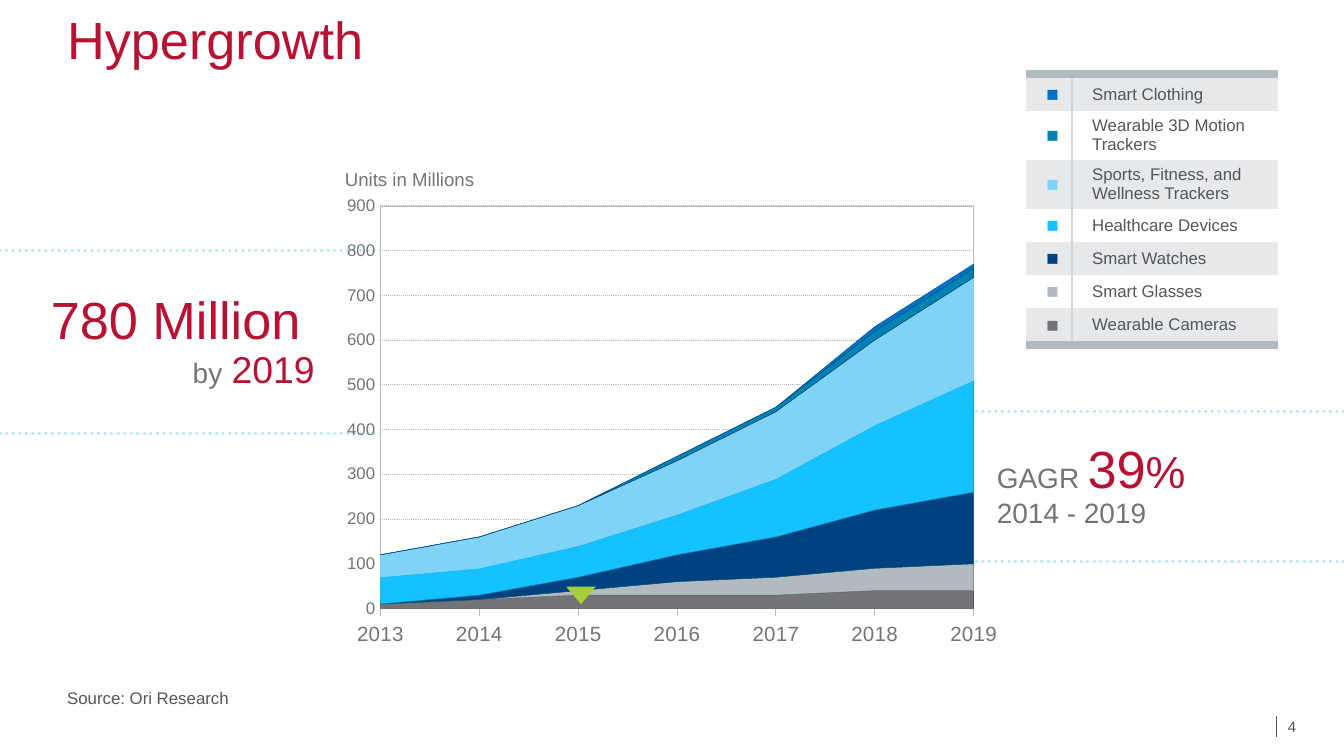
import pptx
import pptx.chart.data
import pptx.dml.color
import pptx.enum.chart
import pptx.enum.dml
import pptx.enum.shapes
import pptx.enum.text
import pptx.oxml
import pptx.oxml.ns
import pptx.util
from lxml import etree

Cm, Pt = pptx.util.Cm, pptx.util.Pt
qn = pptx.oxml.ns.qn
ANCHOR = pptx.enum.text.MSO_ANCHOR
ALIGN = pptx.enum.text.PP_ALIGN
DOTTED = pptx.enum.dml.MSO_LINE.ROUND_DOT
FONT = "Arial"
RED, DARK, GRAY, SILVER = "B71234", "53565A", "727478", "B1BABF"
BAND, WHITE, DIVIDER, DOTS = "E6E8EA", "FFFFFF", "D0D6D9", "A9E2F8"
NO_GRID_STYLE = "{2D5ABB26-0587-4C30-8999-92F81FD0307C}"

YEARS = ["2013", "2014", "2015", "2016", "2017", "2018", "2019"]
# Bottom to top: name, fill, outline, millions of units per year
DEVICES = [
    ("Wearable Cameras", "727478", "3E4043", [10, 20, 30, 30, 30, 40, 40]),
    ("Smart Glasses", "B1BABF", "727478", [0, 0, 10, 30, 40, 50, 60]),
    ("Smart Watches", "004280", "005778", [0, 10, 30, 60, 90, 130, 160]),
    ("Healthcare Devices", "15C2FF", "0083B3", [60, 60, 70, 90, 130, 190, 250]),
    ("Sports, Fitness, and Wellness Trackers", "7ED3F7", "7ED3F7",
     [50, 70, 90, 120, 150, 190, 230]),
    ("Wearable 3D Motion Trackers", "0083B3", "003160", [0, 0, 0, 10, 10, 20, 20]),
    ("Smart Clothing", "0071C5", "005594", [0, 0, 0, 0, 0, 10, 10]),
]


def rgb(color):
    return pptx.dml.color.RGBColor.from_string(color)


def fill_solid(fill, color):
    fill.solid()
    fill.fore_color.rgb = rgb(color)


def style_line(line, color, width):
    line.color.rgb = rgb(color)
    line.width = Pt(width)


def style_font(font, size, color):
    font.name, font.size = FONT, Pt(size)
    font.color.rgb = rgb(color)


def add_runs(paragraph, runs):
    """Add (text, size, colour) runs; a trailing newline becomes a line break."""
    for text, size, color in runs:
        run = paragraph.add_run()
        run.text = text.rstrip("\n")
        style_font(run.font, size, color)
        if text.endswith("\n"):
            paragraph.add_line_break()


def add_text(slide, box, paragraphs, anchor=ANCHOR.MIDDLE, align=ALIGN.LEFT,
             margins=True, wrap=True, spacing=0.9):
    frame = slide.shapes.add_textbox(*map(Cm, box)).text_frame
    frame.word_wrap = wrap
    frame.vertical_anchor = anchor
    if not margins:
        frame.margin_left = frame.margin_right = 0
        frame.margin_top = frame.margin_bottom = 0
    for index, runs in enumerate(paragraphs):
        paragraph = frame.add_paragraph() if index else frame.paragraphs[0]
        paragraph.alignment = align
        paragraph.line_spacing = spacing
        add_runs(paragraph, runs)


def add_rule(slide, start, end, color, width, dotted=False):
    rule = slide.shapes.add_connector(
        pptx.enum.shapes.MSO_CONNECTOR.STRAIGHT, *map(Cm, start + end))
    style_line(rule.line, color, width)
    properties = rule._element.spPr
    if dotted:
        rule.line.dash_style = DOTTED
        properties.find(qn("a:ln")).set("cap", "rnd")
    etree.SubElement(properties, qn("a:effectLst"))


def chart_xml(tag, content):
    return pptx.oxml.parse_xml(
        f'<c:{tag} {pptx.oxml.ns.nsdecls("c", "a")}>{content}</c:{tag}>')


def frame_plot(chart):
    """Fix the plot area, give it a white fill and clear the chart background."""
    plot_area = chart._chartSpace.chart.plotArea
    for layout in plot_area.findall(qn("c:layout")):
        plot_area.remove(layout)
    sides = {"x": 0.07, "y": 0.04, "w": 0.88, "h": 0.86}
    modes = '<c:layoutTarget val="inner"/><c:xMode val="edge"/><c:yMode val="edge"/>'
    values = "".join(f'<c:{side} val="{value}"/>' for side, value in sides.items())
    plot_area.insert(0, chart_xml(
        "layout", f"<c:manualLayout>{modes}{values}</c:manualLayout>"))
    plot_area.append(chart_xml(
        "spPr", f'<a:solidFill><a:srgbClr val="{WHITE}"/></a:solidFill><a:ln w="6350">'
        f'<a:solidFill><a:srgbClr val="{SILVER}"/></a:solidFill></a:ln>'))
    chart._chartSpace.find(qn("c:txPr")).addprevious(
        chart_xml("spPr", "<a:noFill/><a:ln><a:noFill/></a:ln>"))


def add_units_chart(slide):
    data = pptx.chart.data.CategoryChartData(number_format="#,##0")
    data.categories = YEARS
    for name, _, _, millions in DEVICES:
        data.add_series(name, [value * 1_000_000 for value in millions])
    chart = slide.shapes.add_chart(
        pptx.enum.chart.XL_CHART_TYPE.AREA_STACKED,
        Cm(6.3), Cm(3.54), Cm(12.74), Cm(8.85), data).chart
    style_font(chart.font, 10, DARK)
    chart.has_legend = chart.has_title = False
    chart.plots[0].vary_by_categories = False
    for series, (_, color, outline, _) in zip(chart.plots[0].series, DEVICES):
        fill_solid(series.format.fill, color)
        style_line(series.format.line, outline, 0.25)

    marks = pptx.enum.chart.XL_TICK_MARK
    years, units = chart.category_axis, chart.value_axis
    for axis, size, mark in ((years, 11, marks.OUTSIDE), (units, 9, marks.NONE)):
        style_font(axis.tick_labels.font, size, GRAY)
        style_line(axis.format.line, SILVER, 0.5)
        axis.major_tick_mark, axis.minor_tick_mark = mark, marks.NONE
    years.has_major_gridlines = False
    units.minimum_scale, units.maximum_scale = 0, 900_000_000
    units.major_unit = 100_000_000
    units.tick_labels.number_format = "#,##0,,"
    units.tick_labels.number_format_is_linked = False
    units.has_major_gridlines = True
    style_line(units.major_gridlines.format.line, SILVER, 0.5)
    units.major_gridlines.format.line.dash_style = DOTTED
    units._element.find(qn("c:crossBetween")).set("val", "midCat")
    frame_plot(chart)


def add_border(cell, side):
    border = pptx.oxml.parse_xml(
        f'<a:{side} {pptx.oxml.ns.nsdecls("a")} w="12700"><a:solidFill>'
        f'<a:srgbClr val="{DIVIDER}"/></a:solidFill></a:{side}>')
    cell._tc.get_or_add_tcPr().insert(0, border)


def set_margins(cell, horizontal, vertical):
    cell.margin_left = cell.margin_right = Cm(horizontal)
    cell.margin_top = cell.margin_bottom = Cm(vertical)


def add_legend_table(slide):
    rows = len(DEVICES) + 2
    table = slide.shapes.add_table(
        rows, 2, Cm(19.39), Cm(1.32), Cm(4.76), Cm(5.22)).table
    table.first_row = table.horz_banding = False
    table._tbl.tblPr.find(qn("a:tableStyleId")).text = NO_GRID_STYLE
    table.columns[0].width, table.columns[1].width = Cm(0.87), Cm(3.89)

    for row in (0, rows - 1):
        table.rows[row].height = Cm(0.15)
        bar = table.cell(row, 0)
        bar.merge(table.cell(row, 1))
        for cell in table.rows[row].cells:
            fill_solid(cell.fill, SILVER)
            set_margins(cell, 0, 0)
            cell.text_frame.paragraphs[0].font.size = Pt(1)

    for row, (name, color, _, _) in enumerate(reversed(DEVICES), 1):
        table.rows[row].height = Cm(0.92 if len(name) > 20 else 0.61)
        key, label = table.cell(row, 0), table.cell(row, 1)
        for cell, side in ((key, "lnR"), (label, "lnL")):
            fill_solid(cell.fill, BAND if row % 2 else WHITE)
            set_margins(cell, 0.38, 0.08)
            cell.vertical_anchor = ANCHOR.MIDDLE
            add_border(cell, side)
        # The narrow key column needs room for its square
        key.margin_left, key.margin_right = Cm(0.2), Cm(0.07)
        key.text_frame.paragraphs[0].alignment = ALIGN.CENTER
        add_runs(key.text_frame.paragraphs[0], [("■", 11, color)])
        add_runs(label.text_frame.paragraphs[0], [(name, 9, DARK)])


def add_year_marker(slide):
    marker = slide.shapes.add_shape(
        pptx.enum.shapes.MSO_SHAPE.ISOSCELES_TRIANGLE,
        Cm(10.7), Cm(11.09), Cm(0.56), Cm(0.33))
    marker.rotation = 180
    marker.shadow.inherit = False
    fill_solid(marker.fill, "A6CE39")
    marker.line.fill.background()


def main():
    deck = pptx.Presentation()
    deck.slide_width, deck.slide_height = Cm(25.4), Cm(14.29)
    slide = deck.slides.add_slide(deck.slide_layouts[6])

    add_rule(slide, (24.13, 13.54), (24.13, 13.94), DARK, 0.5)
    for left, right, heights in ((0, 7.77, (4.73, 8.19)), (17.58, 25.4, (7.78, 10.62))):
        for y in heights:
            add_rule(slide, (left, y), (right, y), DOTS, 1.75, dotted=True)

    add_text(slide, (1.27, 0.27, 22.86, 2.16), [[("Hypergrowth", 28, RED)]],
             anchor=ANCHOR.TOP, margins=False)
    add_text(slide, (24.34, 13.55, 0.64, 0.43), [[("4", 8, DARK)]], margins=False)
    add_text(slide, (1.27, 12.95, 18.9, 0.43), [[("Source: Ori Research", 9, DARK)]],
             anchor=ANCHOR.BOTTOM, margins=False)
    add_units_chart(slide)
    add_text(slide, (0.69, 5.43, 5.51, 2.11),
             [[("780 Million \n", 28, RED), ("by", 15, GRAY), (" ", 18, DARK),
               ("2019", 20, RED)]], align=ALIGN.RIGHT)
    add_text(slide, (18.59, 8.24, 4.78, 1.91),
             [[("GAGR", 15, GRAY), (" ", 16, GRAY), ("39", 28, RED), ("%", 24, RED)],
              [("2014 - 2019", 15, GRAY)]])
    add_legend_table(slide)
    add_text(slide, (6.52, 3.16, 2.46, 0.43), [[("Units in Millions", 10, GRAY)]],
             anchor=ANCHOR.BOTTOM, margins=False, wrap=False, spacing=1.0)
    add_year_marker(slide)
    deck.save("out.pptx")


if __name__ == "__main__":
    main()
